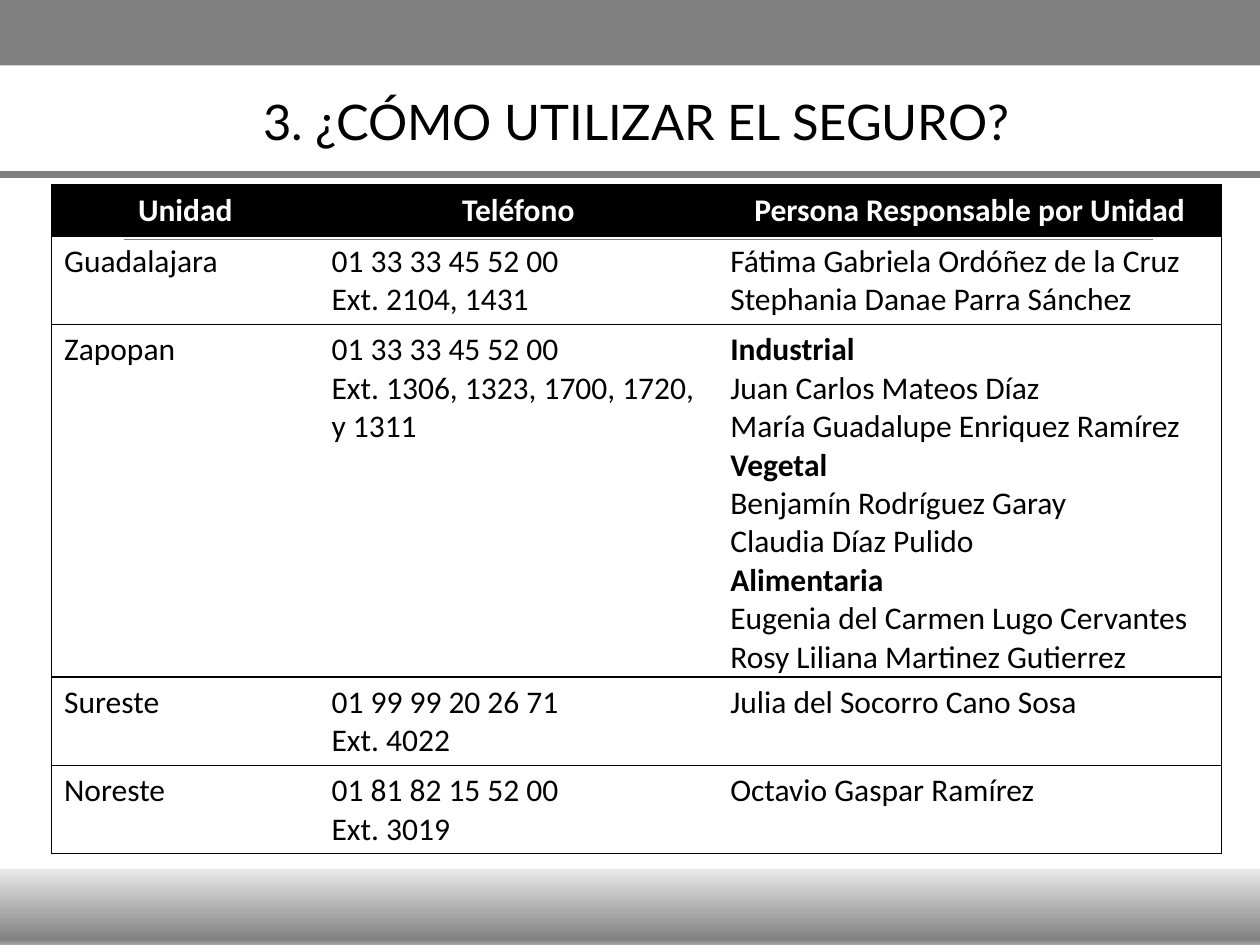
import copy
from dataclasses import dataclass

import pptx
import pptx.dml.color
import pptx.enum.shapes
import pptx.enum.text
import pptx.oxml
import pptx.oxml.ns
import pptx.util
from pptx.util import Cm

qn = pptx.oxml.ns.qn
CENTER = pptx.enum.text.PP_ALIGN.CENTER


@dataclass(frozen=True)
class Theme:
    title_font: str = "Lato"
    table_font: str = "Calibri"
    title_size: int = 28
    table_size: int = 18
    ink: str = "000000"
    paper: str = "FFFFFF"
    gray: str = "808080"
    footer_stops: tuple = ((0, "B8B8B8"), (0.09, "828282"), (1, "E9E9E9"))


def rgb(value):
    return pptx.dml.color.RGBColor.from_string(value)


class SlideBuilder:
    def __init__(self, page, theme):
        self.page = page
        self.theme = theme

    def style(self, para, name, size, color, bold=False):
        font = para.font
        font.name, font.size, font.bold = name, pptx.util.Pt(size), bold
        font.color.rgb = rgb(color)

    def band(self, left, top, width, height):
        shape = self.page.shapes.add_shape(
            pptx.enum.shapes.MSO_SHAPE.RECTANGLE, Cm(left), Cm(top), Cm(width), Cm(height))
        shape.shadow.inherit = False
        shape.line.fill.background()
        shape.fill.solid()
        shape.fill.fore_color.rgb = rgb(self.theme.gray)
        return shape

    def gradient_band(self, left, top, width, height):
        shape = self.band(left, top, width, height)
        shape.fill.gradient()
        shape.fill.gradient_angle = 90
        stop_list = shape._element.spPr.find(".//" + qn("a:gsLst"))
        stop_list.append(copy.deepcopy(stop_list[-1]))
        for stop, (position, color) in zip(shape.fill.gradient_stops, self.theme.footer_stops):
            stop.position = position
            stop.color.rgb = rgb(color)

    def rule(self, left, right, y, weight):
        line = self.page.shapes.add_connector(
            pptx.enum.shapes.MSO_CONNECTOR.STRAIGHT, Cm(left), Cm(y), Cm(right), Cm(y))
        line.line.color.rgb = rgb(self.theme.gray)
        line.line.width = pptx.util.Pt(weight)
        line._element.spPr.append(pptx.oxml.parse_xml(
            f'<a:effectLst {pptx.oxml.ns.nsdecls("a")}/>'))

    def title(self, text, left, top, width, height):
        box = self.page.shapes.add_textbox(Cm(left), Cm(top), Cm(width), Cm(height))
        frame = box.text_frame
        frame.word_wrap = False
        frame.auto_size = pptx.enum.text.MSO_AUTO_SIZE.SHAPE_TO_FIT_TEXT
        para = frame.paragraphs[0]
        para.text, para.alignment = text, CENTER
        self.style(para, self.theme.title_font, self.theme.title_size, self.theme.ink)

    def borders(self, cell, visible_sides):
        properties = cell._tc.get_or_add_tcPr()
        for index, side in enumerate("LRTB"):
            paint = (f'<a:solidFill><a:srgbClr val="{self.theme.ink}"/></a:solidFill>'
                     if side in visible_sides else "<a:noFill/>")
            properties.insert(index, pptx.oxml.parse_xml(
                f'<a:ln{side} {pptx.oxml.ns.nsdecls("a")} w="12700">{paint}</a:ln{side}>'))

    def table(self, rows, bold_lines, left, top, widths, row_height, height):
        frame = self.page.shapes.add_table(
            len(rows), len(widths), Cm(left), Cm(top), Cm(sum(widths)), Cm(height))
        table = frame.table
        table.horz_banding = False
        for column, width in zip(table.columns, widths):
            column.width = Cm(width)
        for r, lines_by_cell in enumerate(rows):
            table.rows[r].height = Cm(row_height)  # rows grow with their text
            for c, text in enumerate(lines_by_cell):
                self.cell(table.cell(r, c), text, bold_lines, header=r == 0)
                outer = "L" if c == 0 else "R" if c == len(widths) - 1 else ""
                self.borders(table.cell(r, c), "TB" + outer)
        frame.height = Cm(height)

    def cell(self, cell, text, bold_lines, header):
        theme = self.theme
        if header:
            cell.fill.solid()
            cell.fill.fore_color.rgb = rgb(theme.ink)
        else:
            cell.fill.background()
        cell.text = text
        for para in cell.text_frame.paragraphs:
            if header:
                para.alignment = CENTER
            self.style(para, theme.table_font, theme.table_size,
                       theme.paper if header else theme.ink,
                       header or para.text in bold_lines)


UNITS = ("Industrial", "Vegetal", "Alimentaria")
CONTACTS = [
    ("Unidad", "Teléfono", "Persona Responsable por Unidad"),
    ("Guadalajara", "01 33 33 45 52 00\nExt. 2104, 1431",
     "Fátima Gabriela Ordóñez de la Cruz\nStephania Danae Parra Sánchez"),
    ("Zapopan", "01 33 33 45 52 00\nExt. 1306, 1323, 1700, 1720, y 1311",
     "Industrial\nJuan Carlos Mateos Díaz\nMaría Guadalupe Enriquez Ramírez\n"
     "Vegetal\nBenjamín Rodríguez Garay\nClaudia Díaz Pulido\n"
     "Alimentaria\nEugenia del Carmen Lugo Cervantes\nRosy Liliana Martinez Gutierrez"),
    ("Sureste", "01 99 99 20 26 71\nExt. 4022", "Julia del Socorro Cano Sosa"),
    ("Noreste", "01 81 82 15 52 00\nExt. 3019", "Octavio Gaspar Ramírez"),
]


def main():
    deck = pptx.Presentation()
    deck.slide_width, deck.slide_height = Cm(25.4), Cm(19.05)
    page = deck.slides.add_slide(deck.slide_layouts[6])
    builder = SlideBuilder(page, Theme())

    # Page frame: thin rule, top band, title rule, footer
    builder.rule(2.49, 23.24, 4.83, 0.5)
    builder.band(0, 0, 25.4, 1.32)
    builder.rule(0, 25.4, 3.52, 4)
    builder.gradient_band(-0.05, 17.52, 25.45, 1.57)

    # Title
    builder.title("3. ¿CÓMO UTILIZAR EL SEGURO?", 4.5, 1.73, 16.66, 1.45)

    # Contacts by unit
    builder.table(CONTACTS, UNITS, 1.04, 3.73, (5.39, 8.04, 10.16), 1.03, 13.49)

    deck.save("out.pptx")


if __name__ == "__main__":
    main()
